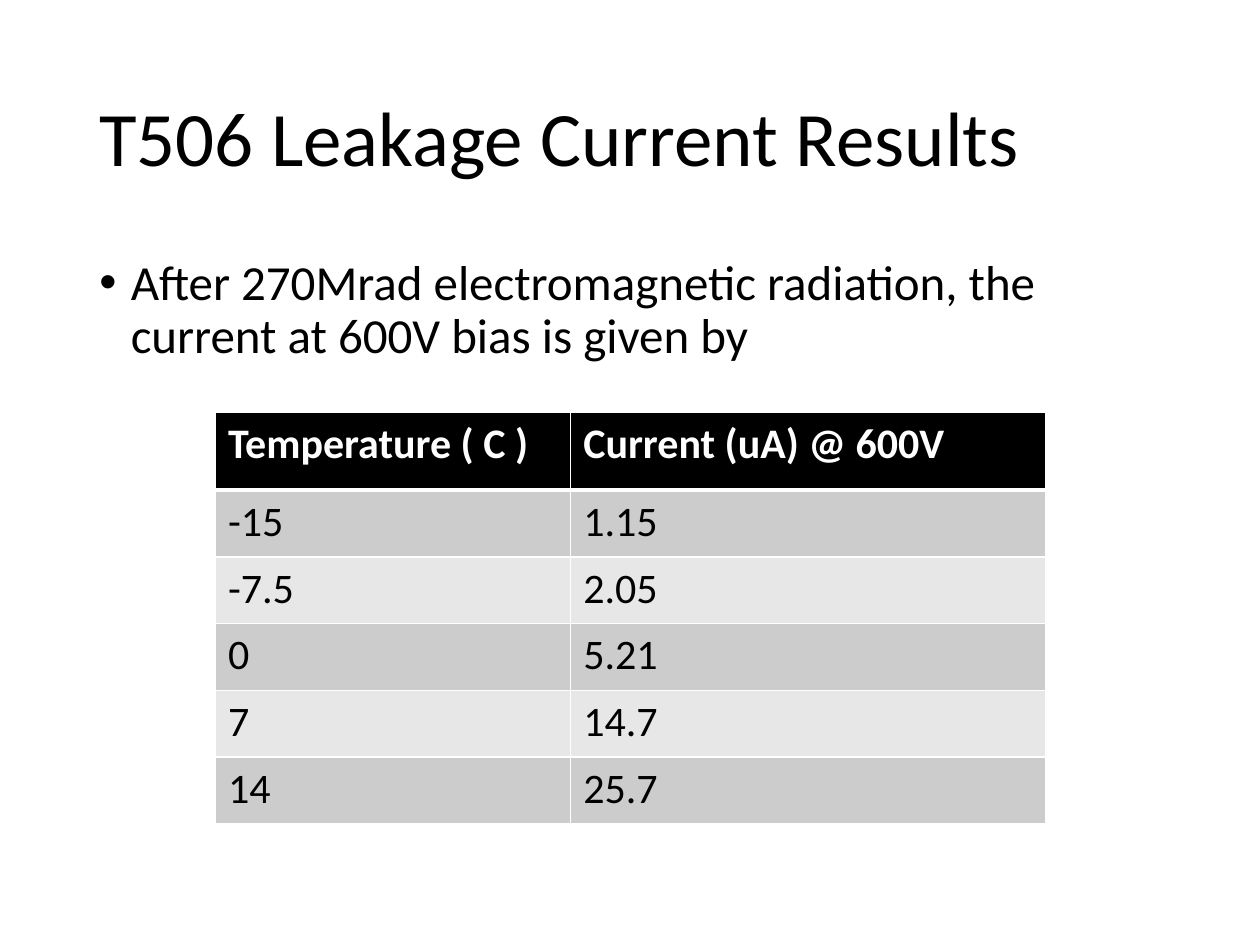
from dataclasses import dataclass

import pptx
import pptx.dml.color
import pptx.enum.text
import pptx.oxml
import pptx.oxml.ns
import pptx.util
from pptx.util import Inches

FONT = "Calibri"
BLACK = "000000"
WHITE = "FFFFFF"
BANDS = ("CCCCCC", "E7E7E7")
COLUMN_WIDTHS = (2.82, 3.77)
HEADER_HEIGHT = 0.62
ROW_HEIGHT = 0.53


@dataclass(frozen=True)
class Box:
    left: float
    top: float
    width: float
    height: float


@dataclass(frozen=True)
class Measurement:
    temperature: str
    current: str


HEADER = Measurement("Temperature ( C )", "Current (uA) @ 600V")
MEASUREMENTS = (
    Measurement("-15", "1.15"),
    Measurement("-7.5", "2.05"),
    Measurement("0", "5.21"),
    Measurement("7", "14.7"),
    Measurement("14", "25.7"),
)


def color(value: str) -> pptx.dml.color.RGBColor:
    return pptx.dml.color.RGBColor.from_string(value)


def write_text(text_frame, text: str, *, size: float, fill: str = BLACK,
               bold: bool = False, line_spacing: float = 1.0,
               space_before: float = 0, bullet_indent: float = 0) -> None:
    text_frame.word_wrap = True
    paragraph = text_frame.paragraphs[0]
    paragraph.line_spacing = line_spacing
    paragraph.space_before = pptx.util.Pt(space_before)
    run = paragraph.add_run()
    run.text = text
    run.font.name = FONT
    run.font.size = pptx.util.Pt(size)
    run.font.bold = bold
    run.font.color.rgb = color(fill)
    if bullet_indent:
        properties = paragraph._p.get_or_add_pPr()
        properties.set("marL", str(Inches(bullet_indent)))
        properties.set("indent", str(-Inches(bullet_indent)))
        namespace = pptx.oxml.ns.nsdecls("a")
        properties.append(pptx.oxml.parse_xml(f'<a:buFont {namespace} typeface="Arial"/>'))
        properties.append(pptx.oxml.parse_xml(f'<a:buChar {namespace} char="•"/>'))


def add_text_box(slide, box: Box, text: str, *,
                 anchor=pptx.enum.text.MSO_ANCHOR.TOP, **text_format) -> None:
    shape = slide.shapes.add_textbox(
        Inches(box.left), Inches(box.top), Inches(box.width), Inches(box.height))
    shape.text_frame.vertical_anchor = anchor
    write_text(shape.text_frame, text, **text_format)


def set_borders(cell, *, top: float = 1, bottom: float = 1) -> None:
    properties = cell._tc.get_or_add_tcPr()
    widths = {"lnL": 1, "lnR": 1, "lnT": top, "lnB": bottom}
    for index, (side, width) in enumerate(widths.items()):
        properties.insert(index, pptx.oxml.parse_xml(
            f'<a:{side} {pptx.oxml.ns.nsdecls("a")} w="{pptx.util.Pt(width)}">'
            f'<a:solidFill><a:srgbClr val="{WHITE}"/></a:solidFill></a:{side}>'))


def add_results_table(slide, left: float, top: float) -> None:
    rows = (HEADER, *MEASUREMENTS)
    height = HEADER_HEIGHT + ROW_HEIGHT * len(MEASUREMENTS)
    table = slide.shapes.add_table(
        len(rows), len(COLUMN_WIDTHS), Inches(left), Inches(top),
        Inches(sum(COLUMN_WIDTHS)), Inches(height)).table
    for column, width in zip(table.columns, COLUMN_WIDTHS):
        column.width = Inches(width)
    for row_index, measurement in enumerate(rows):
        is_header = row_index == 0
        table.rows[row_index].height = Inches(HEADER_HEIGHT if is_header else ROW_HEIGHT)
        background = BLACK if is_header else BANDS[(row_index - 1) % len(BANDS)]
        values = (measurement.temperature, measurement.current)
        for cell, value in zip(table.rows[row_index].cells, values):
            cell.fill.solid()
            cell.fill.fore_color.rgb = color(background)
            set_borders(cell, top=3 if row_index == 1 else 1,
                        bottom=3 if is_header else 1)
            write_text(cell.text_frame, value, size=24, bold=is_header,
                       fill=WHITE if is_header else BLACK)


def main() -> None:
    presentation = pptx.Presentation()
    presentation.slide_width = Inches(10)
    presentation.slide_height = Inches(7.5)
    slide = presentation.slides.add_slide(presentation.slide_layouts[6])
    add_text_box(slide, Box(0.69, 0.4, 8.62, 1.45), "T506 Leakage Current Results",
                 anchor=pptx.enum.text.MSO_ANCHOR.MIDDLE, size=44, line_spacing=0.9)
    add_text_box(slide, Box(0.69, 2, 8.23, 4.76),
                 "After 270Mrad electromagnetic radiation, the current at 600V bias is given by",
                 size=28, line_spacing=0.9, space_before=10, bullet_indent=0.25)
    add_results_table(slide, 1.71, 3.27)
    presentation.save("out.pptx")


if __name__ == "__main__":
    main()
